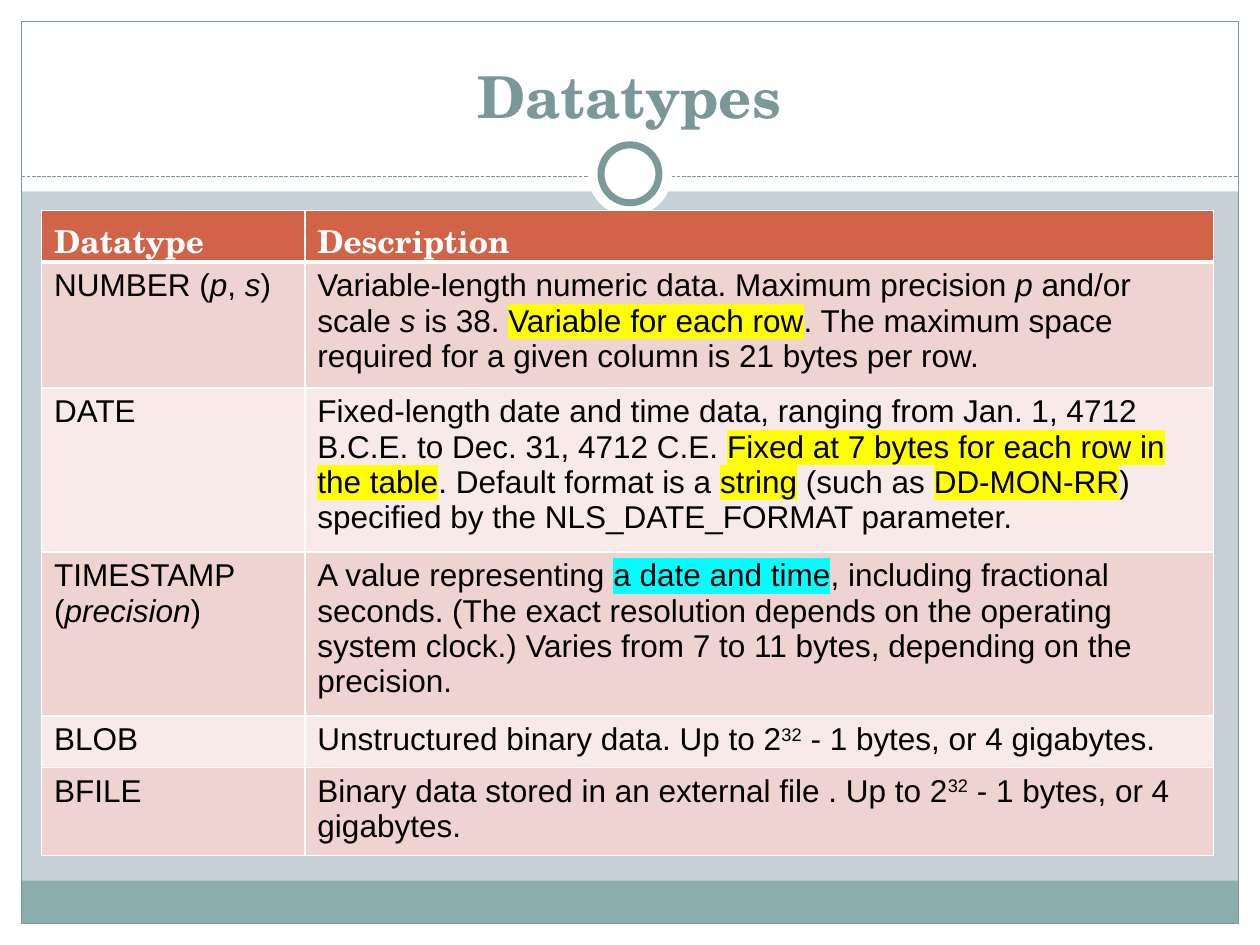
from lxml.etree import SubElement
from pptx import Presentation
from pptx.dml.color import RGBColor
from pptx.enum.dml import MSO_LINE
from pptx.enum.shapes import MSO_CONNECTOR, MSO_SHAPE as Shape
from pptx.enum.text import MSO_ANCHOR as Anchor, PP_ALIGN as Align
from pptx.oxml.ns import qn
from pptx.util import Inches, Pt

HEX = {
    "back": "C5D1D7", "white": "FFFFFF", "band": "8CADAE", "rule": "7C999A",
    "title": "7B9899", "head": "D16349", "odd": "EED3D0", "even": "F7EAE9",
    "text": "000000", "yellow": "FFFF00", "cyan": "00FFFF",
}
SERIF, SANS = "TeX Gyre Schola", "Arial"

# A cell is a list of runs; a run is plain text or a (text, style) pair.
ROWS = [
    (["Datatype"], ["Description"]),
    (["NUMBER (", ("p", "italic"), ", ", ("s", "italic"), ")"],
     ["Variable-length numeric data. Maximum precision ", ("p", "italic"),
      " and/or scale ", ("s ", "italic"), "is 38. ",
      ("Variable for each row", "yellow"),
      ". The maximum space required for a given column is 21 bytes per row."]),
    (["DATE"],
     ["Fixed-length date and time data, ranging from Jan. 1, 4712 B.C.E. "
      "to Dec. 31, 4712 C.E. ",
      ("Fixed at 7 bytes for each row in the table", "yellow"),
      ". Default format is a ", ("string", "yellow"), " (such as ",
      ("DD-MON-RR", "yellow"),
      ") specified by the NLS_DATE_FORMAT parameter."]),
    (["TIMESTAMP (", ("precision", "italic"), ")"],
     ["A value representing ", ("a date and time", "cyan"),
      ", including fractional seconds. (The exact resolution depends on the "
      "operating system clock.) Varies from 7 to 11 bytes, depending on the "
      "precision."]),
    (["BLOB"],
     ["Unstructured binary data. Up to 2", ("32", "super"),
      " - 1 bytes, or 4 gigabytes."]),
    (["BFILE"],
     ["Binary data stored in an external file . Up to 2", ("32", "super"),
      " - 1 bytes, or 4 gigabytes."]),
]
COLS = [2.09, 7.21]
HEIGHTS = [0.41, 1, 1.3, 1.3, 0.41, 0.7]


def rgb(name):
    return RGBColor.from_string(HEX[name])


def set_font(par, name, size, color, bold):
    font = par.font
    font.name, font.size, font.bold = name, Pt(size), bold
    font.color.rgb = rgb(color)


def add_shape(slide, kind, box, fill=None, line=None, width=0.75):
    shape = slide.shapes.add_shape(kind, *map(Inches, box))
    shape.shadow.inherit = False
    if fill:
        shape.fill.solid()
        shape.fill.fore_color.rgb = rgb(fill)
    else:
        shape.fill.background()
    if line:
        shape.line.color.rgb = rgb(line)
        shape.line.width = Pt(width)
    else:
        shape.line.fill.background()


def add_ring(slide, x, y):
    """Place the white disc and its ring around a centre point."""
    for size, line in ((0.67, None), (0.46, "rule")):
        box = (x - size / 2, y - size / 2, size, size)
        add_shape(slide, Shape.OVAL, box, "white", line, 4)


def add_frame(slide, wide, high):
    edge, top = 0.17, 1.52
    inner = wide - 2 * edge
    for box in ((0, high - edge, wide, edge), (0, 0, wide, top),
                (0, 0, edge, high), (wide - edge, 0, edge, high)):
        add_shape(slide, Shape.RECTANGLE, box, "white")
    foot = (edge, high - edge - 0.34, inner, 0.34)
    add_shape(slide, Shape.RECTANGLE, foot, "band")
    add_shape(slide, Shape.RECTANGLE,
              (edge, edge, inner, high - 2 * edge), line="rule")

    rule_y = Inches(top - 0.12)
    rule = slide.shapes.add_connector(MSO_CONNECTOR.STRAIGHT, Inches(edge),
                                      rule_y, Inches(wide - edge), rule_y)
    rule.line.color.rgb = rgb("rule")
    rule.line.width = Pt(0.75)
    rule.line.dash_style = MSO_LINE.SQUARE_DOT
    SubElement(rule.element.spPr, qn("a:effectLst"))
    add_ring(slide, wide / 2, 1.38)


def add_title(slide, box, text):
    frame = slide.shapes.add_textbox(*map(Inches, box)).text_frame
    frame.word_wrap = True
    frame.vertical_anchor = Anchor.BOTTOM
    par = frame.paragraphs[0]
    par.text = text
    par.alignment = Align.CENTER
    set_font(par, SERIF, 33, "title", True)


def add_run(par, item):
    text, style = (item, None) if isinstance(item, str) else item
    run = par.add_run()
    run.text = text
    props = run.font
    if style == "italic":
        props.italic = True
    elif style == "super":
        run._r.get_or_add_rPr().set("baseline", "30000")
    elif style:
        mark = SubElement(run._r.get_or_add_rPr(), qn("a:highlight"))
        SubElement(mark, qn("a:srgbClr"), val=HEX[style])


def set_borders(cell, widths):
    props = cell._tc.get_or_add_tcPr()
    for side, width in zip("LRTB", widths):
        line = SubElement(props, qn("a:ln" + side), w=str(Pt(width)))
        fill = SubElement(line, qn("a:solidFill"))
        SubElement(fill, qn("a:srgbClr"), val=HEX["white"])


def fill_cell(cell, row, items):
    head = row == 0
    set_borders(cell, (1, 1, 3 if row == 1 else 1, 3 if head else 1))
    cell.fill.solid()
    cell.fill.fore_color.rgb = rgb(
        "head" if head else "odd" if row % 2 else "even")
    par = cell.text_frame.paragraphs[0]
    for item in items:
        add_run(par, item)
    if head:
        set_font(par, SERIF, 18, "white", True)
    else:
        set_font(par, SANS, 18, "text", False)


def add_types(slide, left, top):
    """Place the table of datatypes."""
    table = slide.shapes.add_table(
        len(ROWS), len(COLS), Inches(left), Inches(top),
        Inches(sum(COLS)), Inches(sum(HEIGHTS))).table
    for col, width in zip(table.columns, COLS):
        col.width = Inches(width)
    for row, (height, cells) in enumerate(zip(HEIGHTS, ROWS)):
        table.rows[row].height = Inches(height)
        for col, items in enumerate(cells):
            fill_cell(table.cell(row, col), row, items)


def main():
    deck = Presentation()
    wide, high = 10, 7.5
    deck.slide_width, deck.slide_height = Inches(wide), Inches(high)
    slide = deck.slides.add_slide(deck.slide_layouts[6])
    slide.background.fill.solid()
    slide.background.fill.fore_color.rgb = rgb("back")
    add_frame(slide, wide, high)
    add_title(slide, (0.33, 0.25, 9.33, 0.83), "Datatypes")
    add_types(slide, 0.33, 1.67)
    deck.save("out.pptx")


if __name__ == "__main__":
    main()
